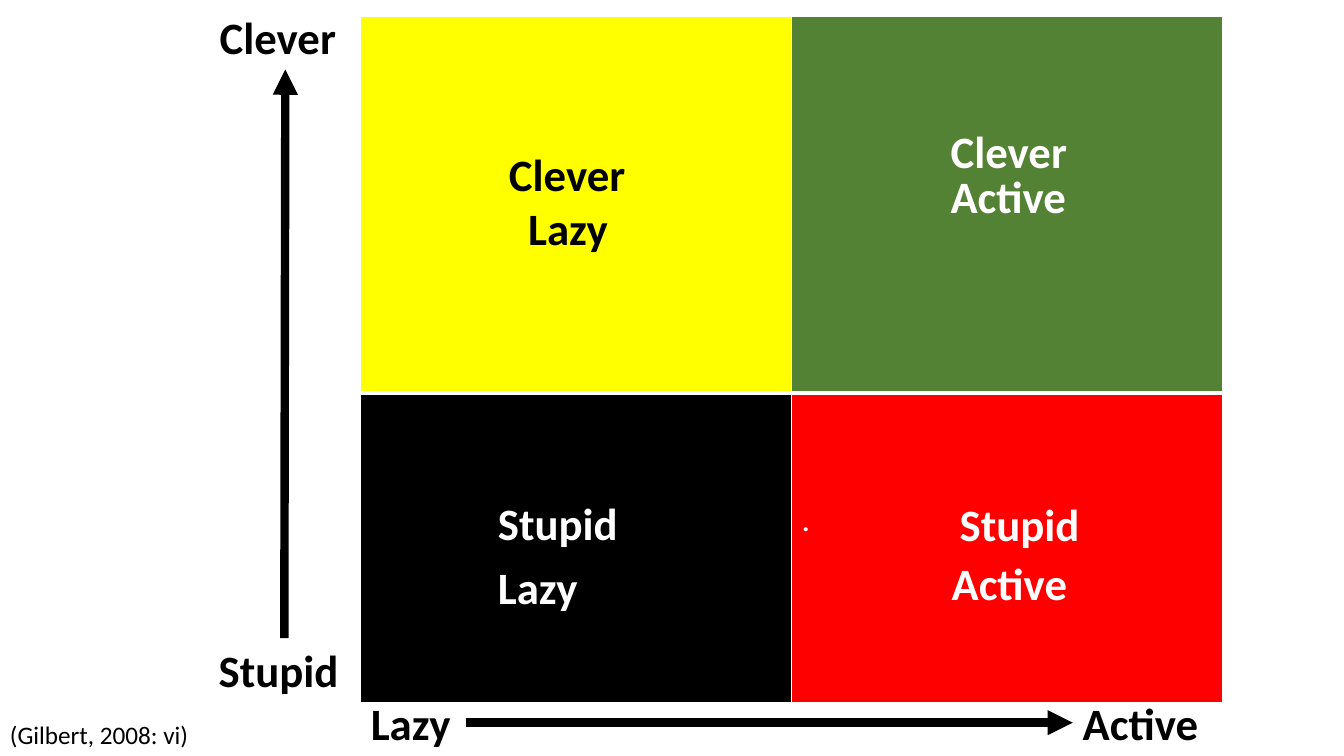
from dataclasses import dataclass

from lxml import etree
from pptx import Presentation
from pptx.dml.color import RGBColor
from pptx.enum.shapes import MSO_CONNECTOR
from pptx.enum.text import MSO_AUTO_SIZE
from pptx.oxml.ns import qn
from pptx.util import Inches, Pt

STRAIGHT = MSO_CONNECTOR.STRAIGHT
GROW = MSO_AUTO_SIZE.SHAPE_TO_FIT_TEXT


@dataclass(frozen=True)
class Theme:
    font: str = "Calibri"
    black: str = "000000"
    white: str = "FFFFFF"
    yellow: str = "FFFF00"
    green: str = "548235"
    red: str = "FF0000"
    label: int = 32
    dot: int = 24
    source: int = 18
    arrow: int = 6


theme = Theme()


def style(p, size, color, bold):
    p.font.name = theme.font
    p.font.size = Pt(size)
    p.font.bold = bold
    p.font.color.rgb = RGBColor.from_string(color)


def add_label(text, x, y, w, color, wrap=True, h=0.64, size=theme.label, bold=True):
    tf = s.shapes.add_textbox(Inches(x), Inches(y), Inches(w), Inches(h)).text_frame
    tf.word_wrap = wrap
    tf.auto_size = GROW
    tf.text = text
    style(tf.paragraphs[0], size, color, bold)


prs = Presentation()
prs.slide_width, prs.slide_height = Inches(13.33), Inches(7.5)
s = prs.slides.add_slide(prs.slide_layouts[6])

# Quadrant table
heights = [3.74, 3.07]
fills = [[theme.yellow, theme.green], [theme.black, theme.red]]
table = s.shapes.add_table(2, 2, Inches(3.57), Inches(0.16),
                           Inches(8.56), Inches(sum(heights))).table
table.first_row = table.horz_banding = False
for i, row_fills in enumerate(fills):
    table.rows[i].height = Inches(heights[i])
    table.columns[i].width = Inches(4.28)
    for j, fill in enumerate(row_fills):
        cell = table.cell(i, j)
        cell.fill.solid()
        cell.fill.fore_color.rgb = RGBColor.from_string(fill)
        # White borders, thicker between the two rows
        tcPr = cell._tc.get_or_add_tcPr()
        middle = "lnB" if i == 0 else "lnT"
        for n, side in enumerate(["lnL", "lnR", "lnT", "lnB"]):
            ln = etree.Element(qn("a:" + side), w=str(Pt(3 if side == middle else 1)))
            solid = etree.SubElement(ln, qn("a:solidFill"))
            etree.SubElement(solid, qn("a:srgbClr"), val=theme.white)
            tcPr.insert(n, ln)

# Small dot in the red quadrant
dot_cell = table.cell(1, 1)
dot_cell.margin_top = Inches(1.06)
dot_cell.text = "."
style(dot_cell.text_frame.paragraphs[0], theme.dot, theme.white, False)

# Axis ends
for text, x, y in [("Stupid", 2.07, 6.33), ("Clever", 2.08, 0.05),
                   ("Lazy", 3.58, 6.85), ("Active", 10.64, 6.85)]:
    add_label(text, x, y, 1.5, theme.black)

# Quadrant labels
for text, x, y, w, color, wrap in [
    ("Stupid", 4.84, 4.87, 1.4, theme.white, False),
    ("Lazy", 4.84, 5.5, 1, theme.white, False),
    ("Stupid", 9.42, 4.88, 1.4, theme.white, False),
    ("Active", 9.34, 5.46, 1.65, theme.white, True),
    ("Clever", 9.33, 1.18, 1.5, theme.white, True),
    ("Active", 9.33, 1.62, 1.5, theme.white, True),
    ("Clever", 4.95, 1.41, 1.5, theme.black, True),
    ("Lazy", 5.14, 1.94, 1.5, theme.black, True),
]:
    add_label(text, x, y, w, color, wrap)

# Axis arrows
for ends in [(2.82, 6.33, 2.83, 0.69), (4.62, 7.17, 10.64, 7.17)]:
    arrow = s.shapes.add_connector(STRAIGHT, *[Inches(v) for v in ends])
    arrow.line.width = Pt(theme.arrow)
    arrow.line.color.rgb = RGBColor.from_string(theme.black)
    etree.SubElement(arrow.line._get_or_add_ln(), qn("a:tailEnd"), type="triangle")
    etree.SubElement(arrow._element.spPr, qn("a:effectLst"))

# Source
add_label("(Gilbert, 2008: vi)", 0, 7.09, 1.99, theme.black, wrap=False,
          h=0.4, size=theme.source, bold=False)

prs.save("out.pptx")
